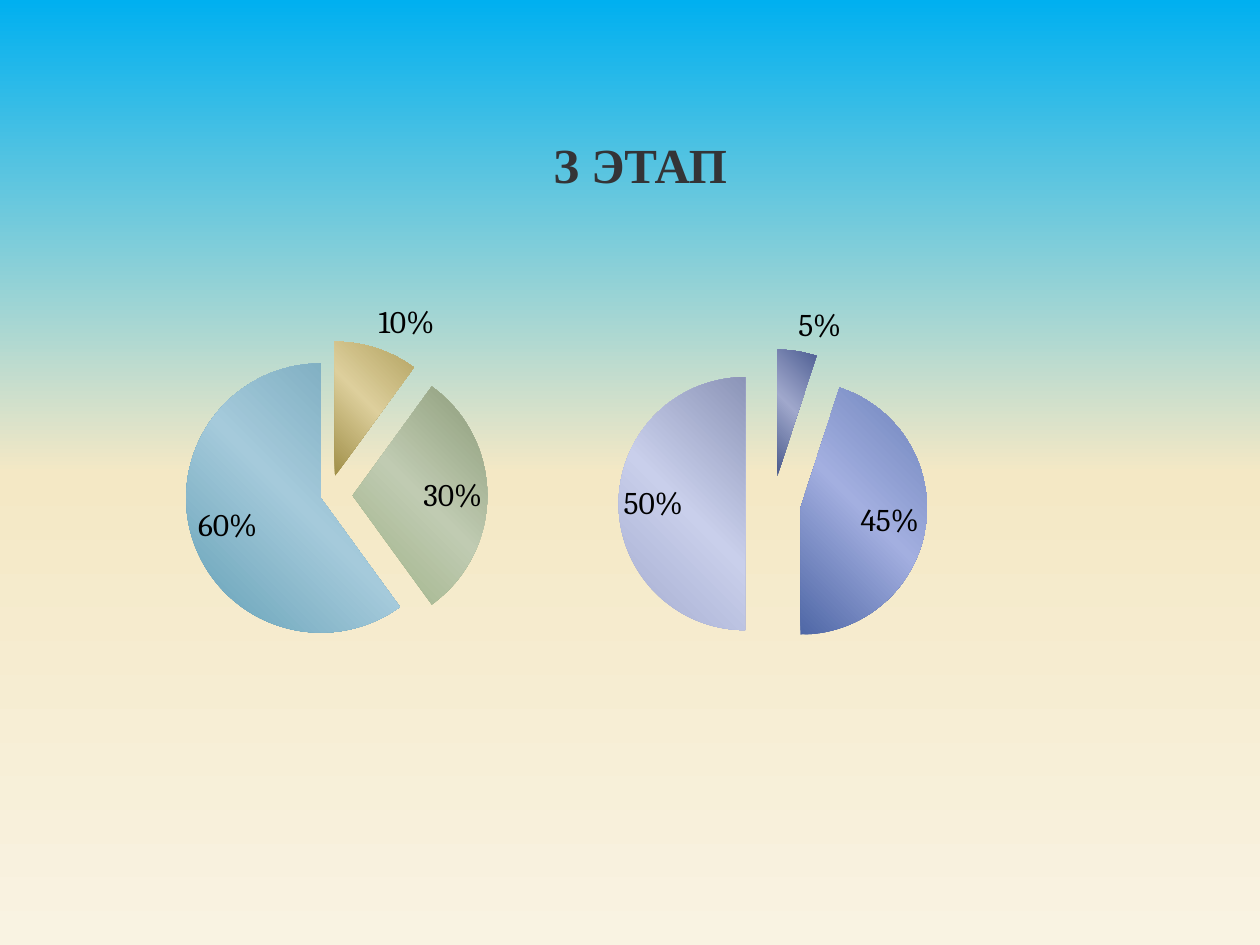
from dataclasses import dataclass

from lxml.etree import SubElement
from pptx import Presentation
from pptx.chart.data import CategoryChartData as ChartData
from pptx.dml.color import RGBColor as RGB
from pptx.dml.fill import FillFormat
from pptx.enum.chart import XL_CHART_TYPE as ChartType, XL_LABEL_POSITION as LabelPos
from pptx.enum.text import PP_ALIGN as Align
from pptx.oxml.ns import qn
from pptx.slide import Slide
from pptx.util import Pt

COLORS = {
    "title": "343436", "label": "000000", "text": "FFFFFF",
    "sky": "00B0F0", "sand": "F4E8C5", "cream": "F9F3E2",
}


@dataclass
class Slice:
    value: float
    shades: tuple[str, str, str]
    explosion: int


@dataclass
class Pie:
    box: tuple[float, float, float, float]
    plot: tuple[float, float, float, float]
    explosion: int
    slices: list[Slice]


PIES = [
    Pie((99.36, 133.92, 339.84, 276.48), (0.02, 0.22, 0.48, 0.64), 6, [
        Slice(0.1, ("A08F48", "DDCF9C", "B3A260"), 15),
        Slice(0.3, ("9CB084", "C0CBB2", "8B9B78"), 18),
        Slice(0.6, ("629FB5", "A5CADB", "6FA3B7"), 6),
    ]),
    Pie((342.72, 151.2, 360, 270.72), (0.03, 0.17, 0.49, 0.67), 22, [
        Slice(0.05, ("4A5A8C", "A0A8CC", "4F5F94"), 22),
        Slice(0.45, ("4F67A6", "A3AFE0", "6C82BA"), 22),
        Slice(0.5, ("A3ABCF", "C9CFEB", "8C95B8"), 22),
    ]),
]


def set_gradient(fill: FillFormat, shades: tuple[str, str, str], angle: float) -> None:
    """Fill with three evenly spaced shades along the given angle."""
    fill.gradient()
    fill.gradient_angle = angle
    stops = fill._xPr.find(qn("a:gradFill")).find(qn("a:gsLst"))
    for stop in list(stops):
        stops.remove(stop)
    for i, shade in enumerate(shades):
        stop = SubElement(stops, qn("a:gs"), pos=str(i * 50000))
        SubElement(stop, qn("a:srgbClr"), val=shade)


def set_plot_area(chart, plot: tuple[float, float, float, float]) -> None:
    """Place the inner plot area by fractions of the chart."""
    area = chart._chartSpace.chart.plotArea
    for old in area.findall(qn("c:layout")):
        area.remove(old)
    layout = SubElement(area, qn("c:layout"))
    area.insert(0, layout)
    manual = SubElement(layout, qn("c:manualLayout"))
    settings = [("layoutTarget", "inner"), ("xMode", "edge"), ("yMode", "edge"),
                *zip("xywh", plot)]
    for name, value in settings:
        SubElement(manual, qn(f"c:{name}"), val=str(value))


def add_explosion(parent, follower, percent: int) -> None:
    """Insert an explosion distance ahead of the following element."""
    follower.addprevious(SubElement(parent, qn("c:explosion"), val=str(percent)))


def style_font(font, size: float, name: str, color: str) -> None:
    """Set size, typeface and colour of a font."""
    font.size, font.name = Pt(size), name
    font.color.rgb = RGB.from_string(COLORS[color])


def add_pie(s: Slide, pie: Pie) -> None:
    """Draw an exploded pie chart with percentage labels."""
    data = ChartData(number_format="0%")
    data.categories = [str(i + 1) for i in range(len(pie.slices))]
    data.add_series("Series 1", [part.value for part in pie.slices])
    chart = s.shapes.add_chart(ChartType.PIE, *map(Pt, pie.box), data).chart
    chart.has_title = chart.has_legend = False
    style_font(chart.font, 18, "Cambria", "text")
    set_plot_area(chart, pie.plot)

    plot = chart.plots[0]
    plot.vary_by_categories = True
    series = plot.series[0]
    labels = series.data_labels
    labels.show_value = True
    labels.number_format, labels.number_format_is_linked = "0%", False
    labels.position = LabelPos.BEST_FIT
    style_font(labels.font, 18, "Cambria", "label")

    ser = series._element
    for i, part in enumerate(pie.slices):
        point = series.points[i]
        set_gradient(point.format.fill, part.shades, 45)
        point.format.line.fill.background()
        dpt = ser.findall(qn("c:dPt"))[i]
        add_explosion(dpt, dpt.find(qn("c:spPr")), part.explosion)
    add_explosion(ser, ser.find(qn("c:dPt")), pie.explosion)


def add_title(s: Slide, text: str) -> None:
    """Add the centred heading."""
    sp = s.shapes.add_textbox(Pt(33.84), Pt(73.44), Pt(658.08), Pt(433.44))
    tf = sp.text_frame
    tf.word_wrap = True
    tf.text = text
    p = tf.paragraphs[0]
    p.alignment = Align.CENTER
    p.space_before = Pt(3)
    p._p.get_or_add_pPr().set("marL", str(Pt(5.76)))
    r = p.runs[0]
    style_font(r.font, 28, "Times New Roman", "title")
    r.font.bold = True


def main() -> None:
    """Build and save the slide."""
    prs = Presentation()
    prs.slide_width, prs.slide_height = Pt(720), Pt(540)
    s = prs.slides.add_slide(prs.slide_layouts[6])
    sky = (COLORS["sky"], COLORS["sand"], COLORS["cream"])
    set_gradient(s.background.fill, sky, 270)
    add_title(s, "З ЭТАП")
    for pie in PIES:
        add_pie(s, pie)
    prs.save("out.pptx")


if __name__ == "__main__":
    main()
